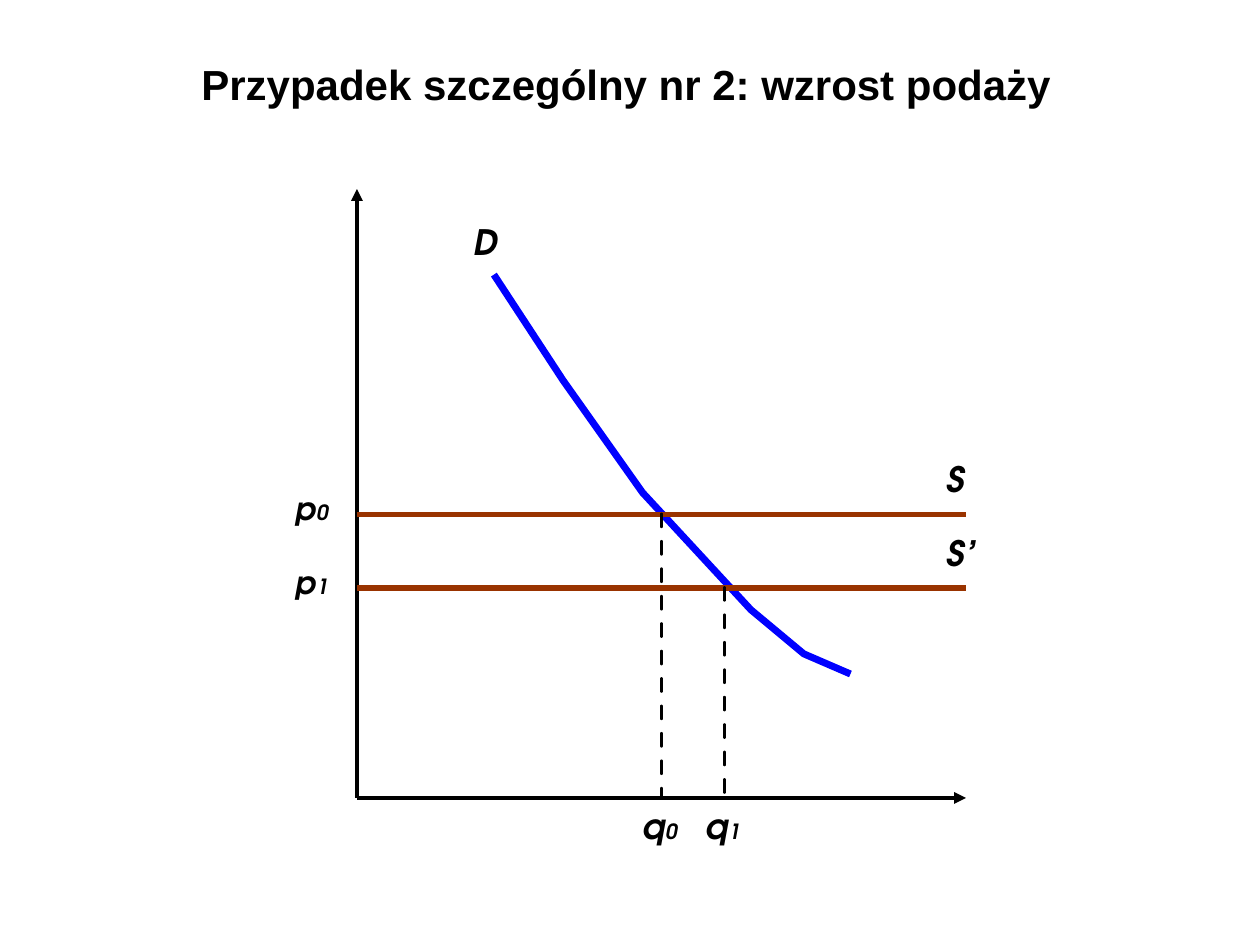
from dataclasses import dataclass

from lxml.etree import SubElement
from pptx import Presentation
from pptx.dml.color import RGBColor
from pptx.enum.dml import MSO_LINE
from pptx.enum.shapes import MSO_CONNECTOR
from pptx.enum.text import MSO_AUTO_SIZE
from pptx.oxml.ns import qn
from pptx.util import Inches, Pt


@dataclass(frozen=True)
class Theme:
    ink: RGBColor = RGBColor(0, 0, 0)
    demand: RGBColor = RGBColor(0, 0, 255)
    supply: RGBColor = RGBColor(153, 51, 0)
    title_font: str = "Arial"
    label_font: str = "TeX Gyre Adventor"
    title_size: int = 24
    label_size: int = 20
    price_size: int = 18
    index_size: int = 12
    axis_width: float = 2.25
    supply_width: float = 3
    demand_width: float = 4


THEME = Theme()
SLIDE_SIZE = (10, 7.5)
CELL = Inches(1) / 12
ORIGIN_COLUMN, ORIGIN_ROW = 34, 76
END_COLUMN, TOP_ROW = 92, 18
TITLE = "Przypadek szczególny nr 2: wzrost podaży"
DEMAND_SCALE = Inches(0.01)
DEMAND_POINTS = [(392, 218), (447, 302), (510, 391), (596, 484), (638, 519), (675, 535)]
EQUILIBRIA = [
    {"index": "0", "supply": "S", "column": 63, "row": 49, "label_width": 4.2},
    {"index": "1", "supply": "S’", "column": 69, "row": 56, "label_width": 5.2},
]


def cells(count):
    return round(count * CELL)


def add_label(slide, column, row, width, height, runs, font=THEME.label_font, italic=True):
    box = slide.shapes.add_textbox(cells(column), cells(row), cells(width), cells(height))
    box.text_frame.word_wrap = False
    box.text_frame.auto_size = MSO_AUTO_SIZE.SHAPE_TO_FIT_TEXT
    paragraph = box.text_frame.paragraphs[0]
    for text, size in runs:
        run = paragraph.add_run()
        run.text = text
        run.font.size = Pt(size)
    paragraph.font.name = font
    paragraph.font.bold = True
    paragraph.font.italic = italic
    paragraph.font.color.rgb = THEME.ink


def add_line(slide, start, end, color=THEME.ink, width=THEME.axis_width):
    connector = slide.shapes.add_connector(
        MSO_CONNECTOR.STRAIGHT, *(cells(count) for count in (*start, *end))
    )
    connector.line.color.rgb = color
    connector.line.width = Pt(width)
    SubElement(connector._element.spPr, qn("a:effectLst"))
    return connector


def add_axis(slide, end):
    axis = add_line(slide, (ORIGIN_COLUMN, ORIGIN_ROW), end)
    SubElement(axis.line._get_or_add_ln(), qn("a:tailEnd"), type="triangle")


def add_demand(slide):
    builder = slide.shapes.build_freeform(*DEMAND_POINTS[0], scale=DEMAND_SCALE)
    builder.add_line_segments(DEMAND_POINTS[1:], close=False)
    curve = builder.convert_to_shape()
    curve.shadow.inherit = False
    curve.fill.background()
    curve.line.color.rgb = THEME.demand
    curve.line.width = Pt(THEME.demand_width)
    add_label(slide, 43.9, 20.4, 4.7, 5.2, [("D", THEME.label_size)])


def add_equilibrium(slide, index, supply, column, row, label_width):
    subscript = (index, THEME.index_size)
    add_line(slide, (ORIGIN_COLUMN, row), (END_COLUMN, row), THEME.supply, THEME.supply_width)
    drop = add_line(slide, (column, row), (column, ORIGIN_ROW))
    drop.line.dash_style = MSO_LINE.DASH
    drop.line._get_or_add_ln().set("cap", "rnd")
    add_label(slide, END_COLUMN - 3, row - 6, label_width, 5.2, [(supply, THEME.label_size)])
    add_label(slide, ORIGIN_COLUMN - 7, row - 3, 5.6, 4.8, [("p", THEME.price_size), subscript])
    add_label(slide, column - 3, ORIGIN_ROW, 5.8, 5.2, [("q", THEME.label_size), subscript])


def main():
    presentation = Presentation()
    presentation.slide_width, presentation.slide_height = map(Inches, SLIDE_SIZE)
    slide = presentation.slides.add_slide(presentation.slide_layouts[6])
    add_label(slide, 18, 5, 83.3, 6, [(TITLE, THEME.title_size)], THEME.title_font, False)
    add_demand(slide)
    add_axis(slide, (ORIGIN_COLUMN, TOP_ROW))
    add_axis(slide, (END_COLUMN, ORIGIN_ROW))
    for equilibrium in EQUILIBRIA:
        add_equilibrium(slide, **equilibrium)
    presentation.save("out.pptx")


if __name__ == "__main__":
    main()
